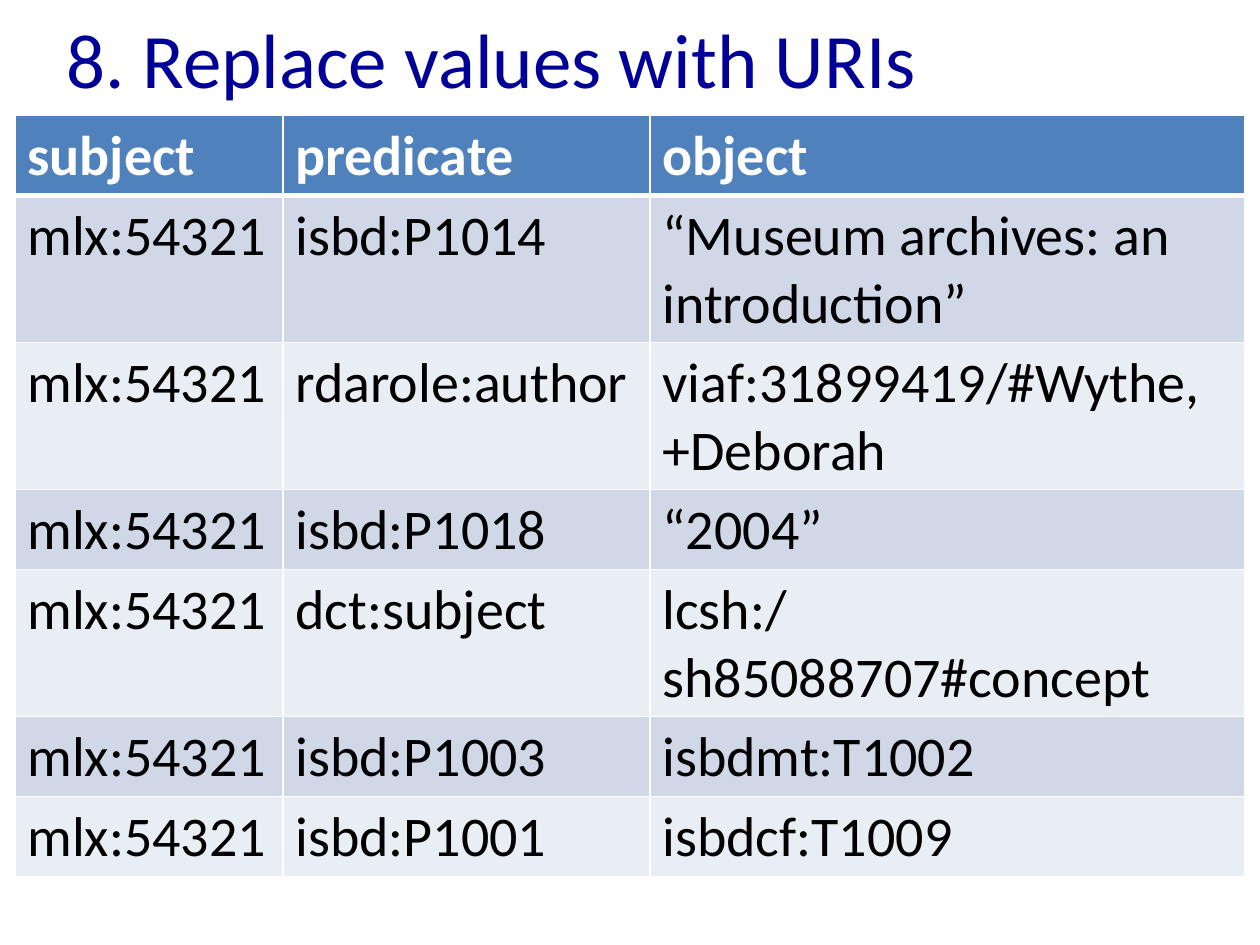
"""Build the slide on replacing values with URIs in RDF triples."""
import pptx
import pptx.dml.color
import pptx.enum.text
import pptx.oxml.ns
import pptx.util
from lxml import etree

Cm = pptx.util.Cm
Pt = pptx.util.Pt
RGBColor = pptx.dml.color.RGBColor

NAVY = RGBColor(0x00, 0x00, 0x99)
BLUE = RGBColor(0x4F, 0x81, 0xBD)
BAND_DARK = RGBColor(0xD0, 0xD8, 0xE8)
BAND_LIGHT = RGBColor(0xE9, 0xED, 0xF4)
WHITE = RGBColor(0xFF, 0xFF, 0xFF)
BLACK = RGBColor(0x00, 0x00, 0x00)

TITLE_FORMAT = {"name": "Calibri", "size": Pt(44), "bold": False}
HEADER_FORMAT = {"name": "Calibri", "size": Pt(32), "bold": True}
BODY_FORMAT = {**HEADER_FORMAT, "bold": False}

SUBJECT = "mlx:54321"
HEADERS = ("subject", "predicate", "object")
STATEMENTS = [
    ("isbd:P1014", "“Museum archives: an introduction”"),
    ("rdarole:author", "viaf:31899419/#Wythe,+Deborah"),
    ("isbd:P1018", "“2004”"),
    ("dct:subject", "lcsh:/sh85088707#concept"),
    ("isbd:P1003", "isbdmt:T1002"),
    ("isbd:P1001", "isbdcf:T1009"),
]
COLUMN_WIDTHS = (Cm(5.4), Cm(7.4), Cm(12))
ROW_HEIGHT = Cm(1.04)


def write(tf, text, fmt, color):
    """Put one formatted run into a text frame."""
    r = tf.paragraphs[0].add_run()
    r.text = text
    for name, value in fmt.items():
        setattr(r.font, name, value)
    r.font.color.rgb = color


def add_title(slide, text):
    """Add the slide title, centred vertically in its box."""
    sp = slide.shapes.add_textbox(Cm(1.1), Cm(0), Cm(22.86), Cm(2.33))
    tf = sp.text_frame
    tf.word_wrap = True
    tf.vertical_anchor = pptx.enum.text.MSO_ANCHOR.MIDDLE
    write(tf, text, TITLE_FORMAT, NAVY)


def set_borders(cell, widths):
    """Draw solid white borders with the given width for each side."""
    tc_pr = cell._tc.get_or_add_tcPr()
    qn = pptx.oxml.ns.qn
    for side, width in widths.items():
        ln = etree.SubElement(tc_pr, qn(f"a:ln{side}"), w=str(Pt(width)))
        fill = etree.SubElement(ln, qn("a:solidFill"))
        etree.SubElement(fill, qn("a:srgbClr"), val=str(WHITE))


def add_triples(slide, rows):
    """Add the banded table of triples under a header row."""
    height = ROW_HEIGHT * len(rows)
    frame = slide.shapes.add_table(len(rows), len(HEADERS), Cm(0.3), Cm(2.33),
                                   sum(COLUMN_WIDTHS), height)
    table = frame.table
    for column, width in zip(table.columns, COLUMN_WIDTHS):
        column.width = width
    for i, row in enumerate(rows):
        if i == 0:
            fill, color, fmt = BLUE, WHITE, HEADER_FORMAT
        else:
            fill = BAND_DARK if i % 2 else BAND_LIGHT
            color, fmt = BLACK, BODY_FORMAT
        borders = {"L": 1, "R": 1, "T": 3 if i == 1 else 1, "B": 3 if i == 0 else 1}
        for j, text in enumerate(row):
            cell = table.cell(i, j)
            set_borders(cell, borders)
            cell.fill.solid()
            cell.fill.fore_color.rgb = fill
            write(cell.text_frame, text, fmt, color)


def main():
    """Create the presentation and save it."""
    prs = pptx.Presentation()
    prs.slide_width, prs.slide_height = Cm(25.4), Cm(19.05)
    slide = prs.slides.add_slide(prs.slide_layouts[6])
    add_title(slide, "8. Replace values with URIs")
    add_triples(slide, [HEADERS] + [(SUBJECT, *s) for s in STATEMENTS])
    prs.save("out.pptx")


if __name__ == "__main__":
    main()
